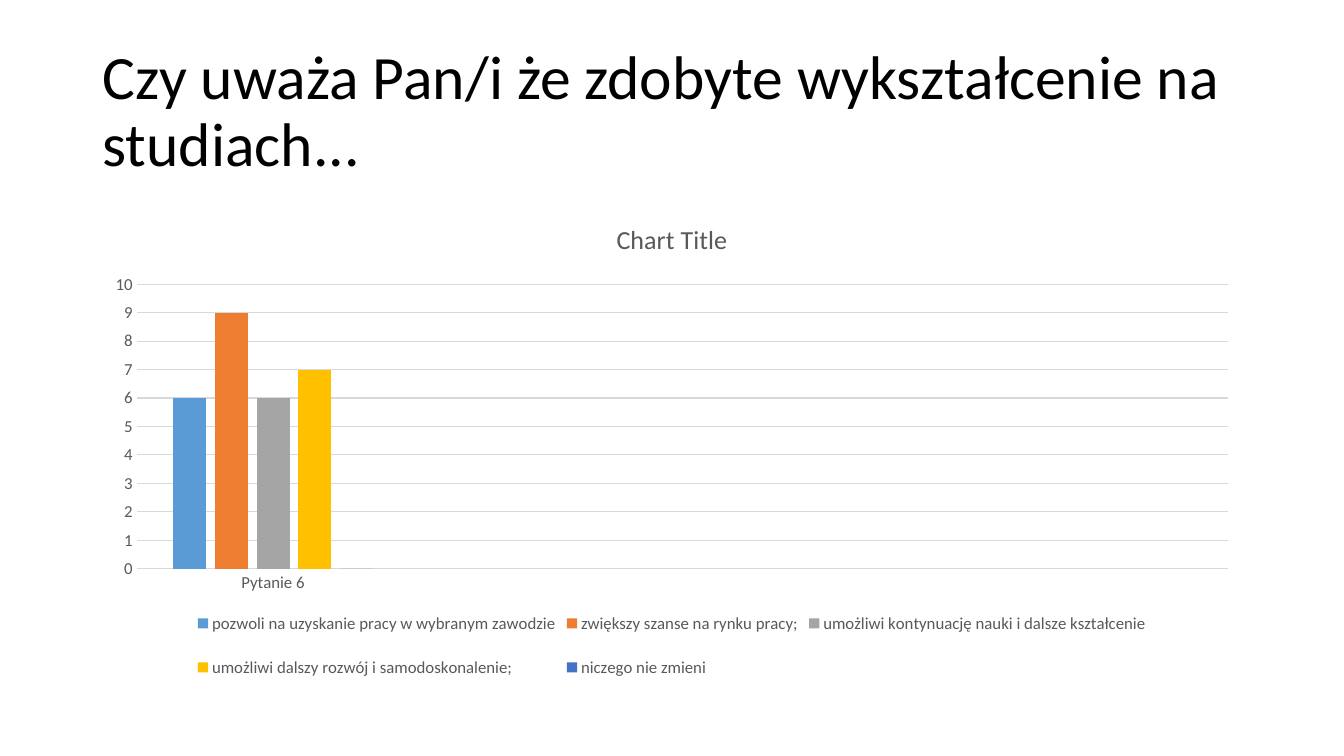
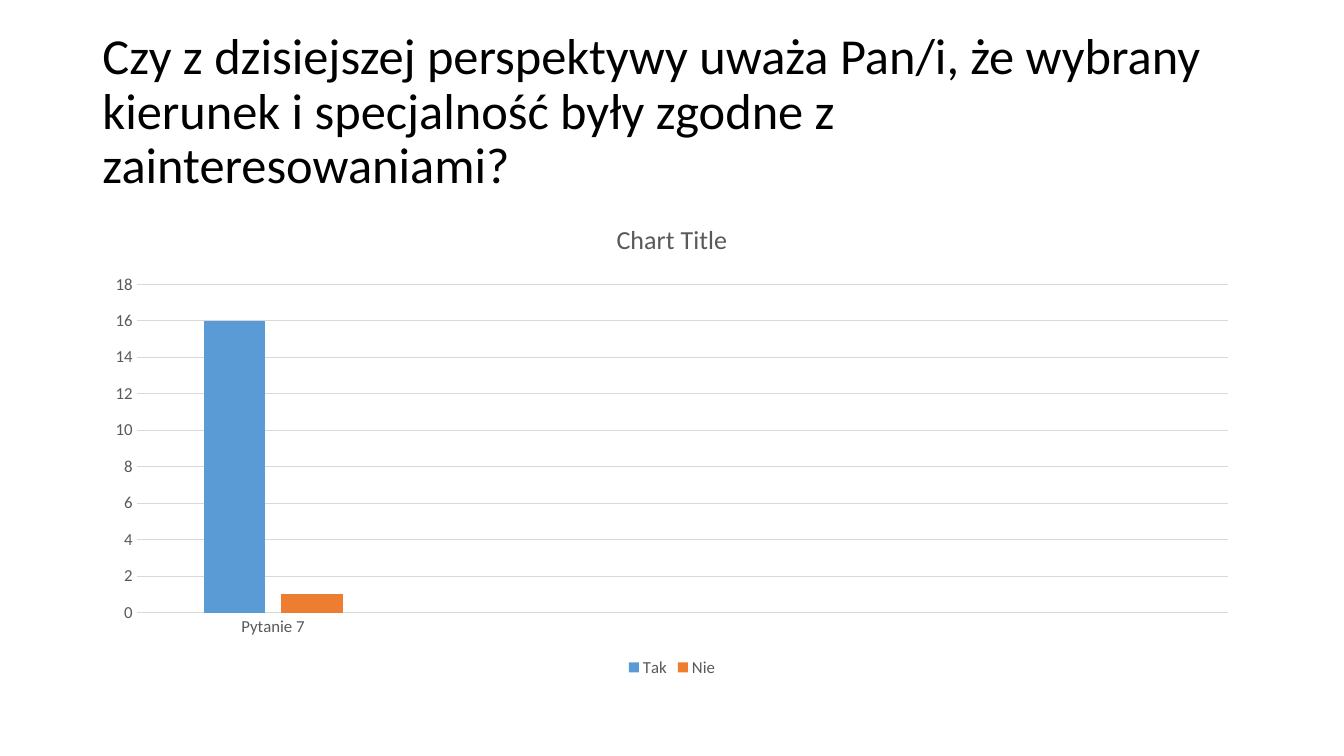
from dataclasses import dataclass

from pptx import Presentation
from pptx.chart.axis import CategoryAxis, ValueAxis
from pptx.chart.chart import Chart
from pptx.chart.data import CategoryChartData
from pptx.dml.color import RGBColor
from pptx.enum.chart import XL_CHART_TYPE, XL_LEGEND_POSITION, XL_TICK_MARK
from pptx.enum.text import MSO_ANCHOR, MSO_AUTO_SIZE, PP_ALIGN
from pptx.dml.line import LineFormat
from pptx.presentation import Presentation as Deck
from pptx.slide import Slide
from pptx.text.text import Font, TextFrame
from pptx.util import Emu, Pt

EMU_PER_PX = 9525
FONT_NAME = "Calibri"
COLORS = {"title": "000000", "label": "595959", "grid": "D9D9D9"}
SERIES_COLORS = {
    "blue": "5B9BD5",
    "orange": "ED7D31",
    "gray": "A5A5A5",
    "gold": "FFC000",
    "navy": "4472C4",
}
CATEGORY_SLOTS = 4


@dataclass(frozen=True)
class Box:
    left: int
    top: int
    width: int
    height: int

    def emu(self) -> tuple[Emu, Emu, Emu, Emu]:
        return px(self.left), px(self.top), px(self.width), px(self.height)


@dataclass(frozen=True)
class Question:
    title: str
    title_size: int
    category: str
    answers: dict[str, int]
    axis_max: int
    axis_step: int


TITLE_BOX = Box(88, 38, 1104, 139)
CHART_BOX = Box(88, 192, 1104, 457)

QUESTIONS = [
    Question(
        "Czy uważa Pan/i że zdobyte wykształcenie na studiach...",
        44,
        "Pytanie 6",
        {
            "pozwoli na uzyskanie pracy w wybranym zawodzie": 6,
            "zwiększy szanse na rynku pracy;\n": 9,
            "umożliwi kontynuację nauki i dalsze kształcenie": 6,
            "umożliwi dalszy rozwój i samodoskonalenie;": 7,
            "niczego nie zmieni": 0,
        },
        10,
        1,
    ),
    Question(
        "Czy z dzisiejszej perspektywy uważa Pan/i, że wybrany kierunek "
        "i specjalność były zgodne z zainteresowaniami?",
        36,
        "Pytanie 7",
        {"Tak": 16, "Nie": 1},
        18,
        2,
    ),
]


def px(length: int) -> Emu:
    return Emu(length * EMU_PER_PX)


def style_font(font: Font, size: float, color: str) -> None:
    font.name = FONT_NAME
    font.size = Pt(size)
    font.bold = False
    font.color.rgb = RGBColor.from_string(color)


def write_text(
    frame: TextFrame,
    text: str,
    *,
    size: float,
    color: str,
    align: PP_ALIGN = PP_ALIGN.LEFT,
    line_spacing: float = 1.0,
) -> None:
    paragraph = frame.paragraphs[0]
    paragraph.alignment = align
    paragraph.line_spacing = line_spacing
    run = paragraph.add_run()
    run.text = text
    style_font(run.font, size, color)


def style_line(line: LineFormat) -> None:
    line.color.rgb = RGBColor.from_string(COLORS["grid"])
    line.width = Pt(0.75)


def style_axis(axis: CategoryAxis | ValueAxis) -> None:
    axis.major_tick_mark = XL_TICK_MARK.NONE
    axis.minor_tick_mark = XL_TICK_MARK.NONE
    style_font(axis.tick_labels.font, 12, COLORS["label"])


def add_title(slide: Slide, question: Question) -> None:
    title = slide.shapes.title
    title.left, title.top, title.width, title.height = TITLE_BOX.emu()
    frame = title.text_frame
    frame.word_wrap = True
    frame.auto_size = MSO_AUTO_SIZE.NONE
    frame.vertical_anchor = MSO_ANCHOR.MIDDLE
    write_text(
        frame,
        question.title,
        size=question.title_size,
        color=COLORS["title"],
        line_spacing=0.9,
    )


def style_chart(chart: Chart, question: Question) -> None:
    style_font(chart.font, 10, COLORS["title"])
    chart.has_title = True
    write_text(
        chart.chart_title.text_frame,
        "Chart Title",
        size=18.6,
        color=COLORS["label"],
        align=PP_ALIGN.CENTER,
    )
    chart.chart_title.include_in_layout = False

    chart.has_legend = True
    chart.legend.position = XL_LEGEND_POSITION.BOTTOM
    chart.legend.include_in_layout = False
    style_font(chart.legend.font, 12, COLORS["label"])

    style_axis(chart.category_axis)
    style_line(chart.category_axis.format.line)

    values = chart.value_axis
    style_axis(values)
    values.minimum_scale = 0
    values.maximum_scale = question.axis_max
    values.major_unit = question.axis_step
    values.format.line.fill.background()
    values.has_major_gridlines = True
    style_line(values.major_gridlines.format.line)

    plot = chart.plots[0]
    plot.gap_width = 219
    plot.overlap = -27
    plot.vary_by_categories = False
    for series, color in zip(plot.series, SERIES_COLORS.values()):
        series.format.fill.solid()
        series.format.fill.fore_color.rgb = RGBColor.from_string(color)
        series.invert_if_negative = False


def add_answers_chart(slide: Slide, question: Question) -> None:
    blanks = CATEGORY_SLOTS - 1
    answers = CategoryChartData(number_format="General")
    answers.categories = [question.category] + [""] * blanks
    for answer, count in question.answers.items():
        answers.add_series(answer, [count] + [None] * blanks)
    frame = slide.shapes.add_chart(
        XL_CHART_TYPE.COLUMN_CLUSTERED, *CHART_BOX.emu(), answers
    )
    style_chart(frame.chart, question)


def add_question_slide(deck: Deck, question: Question) -> None:
    title_only = deck.slide_layouts.get_by_name("Title Only")
    slide = deck.slides.add_slide(title_only)
    add_title(slide, question)
    add_answers_chart(slide, question)


def main() -> None:
    deck = Presentation()
    deck.slide_width, deck.slide_height = px(1280), px(720)
    for question in QUESTIONS:
        add_question_slide(deck, question)
    deck.save("out.pptx")


if __name__ == "__main__":
    main()
